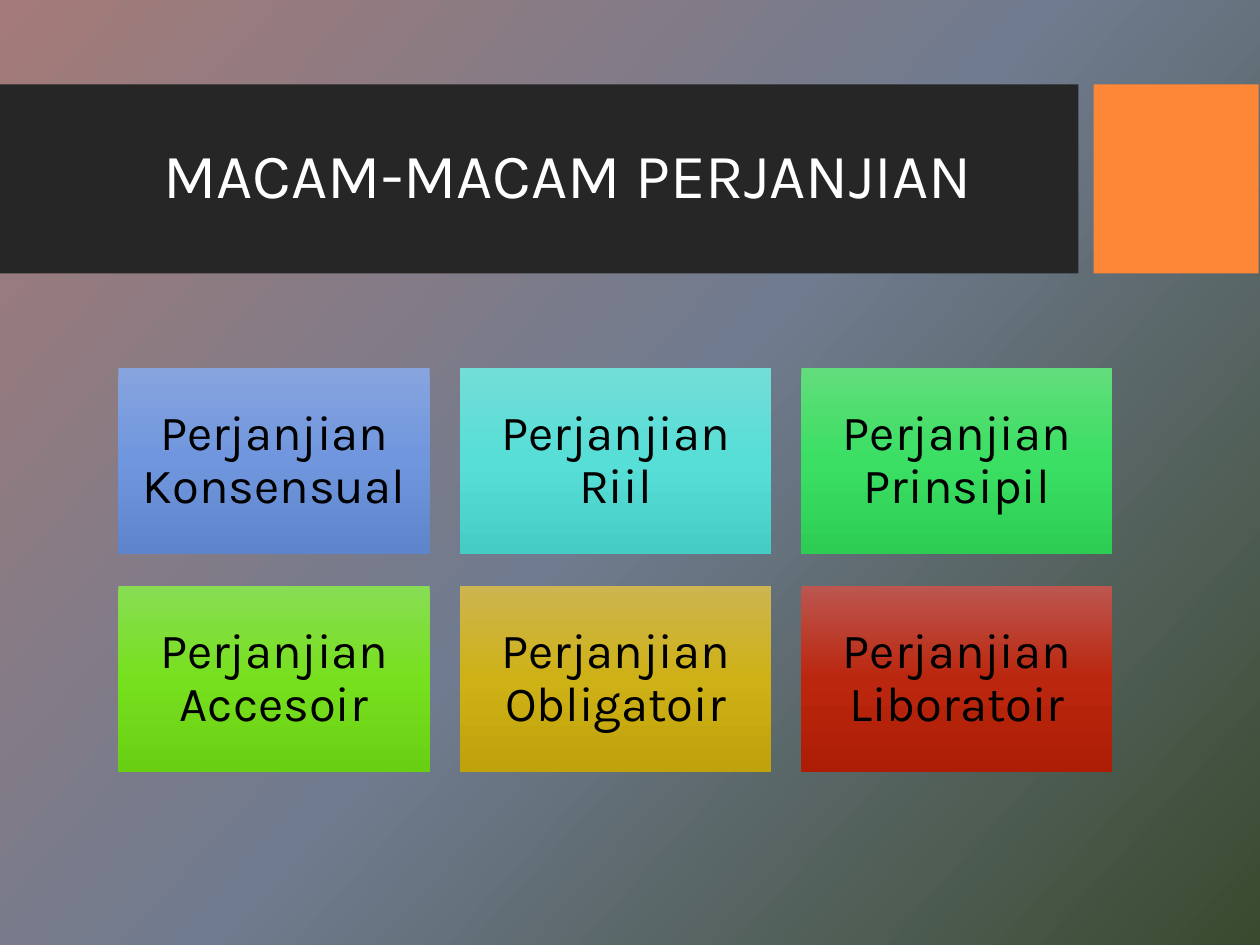
import copy
import pptx
import pptx.util
import pptx.dml.color
import pptx.enum.shapes
import pptx.enum.text
import pptx.oxml.ns

Inches = pptx.util.Inches
RGBColor = pptx.dml.color.RGBColor

WHITE = RGBColor(0xFF, 0xFF, 0xFF)
BLACK = RGBColor(0x00, 0x00, 0x00)
CHARCOAL = RGBColor(0x26, 0x26, 0x26)
ORANGE = RGBColor(0xFE, 0x86, 0x37)
BACKDROP = [RGBColor(0xA4, 0x7B, 0x78), RGBColor(0x70, 0x7B, 0x8F), RGBColor(0x3A, 0x4A, 0x2F)]
BLUE = [RGBColor(0x87, 0xA4, 0xDE), RGBColor(0x70, 0x96, 0xDE), RGBColor(0x5E, 0x84, 0xCB)]
TURQUOISE = [RGBColor(0x73, 0xDD, 0xD7), RGBColor(0x56, 0xDE, 0xD7), RGBColor(0x45, 0xCC, 0xC5)]
GREEN = [RGBColor(0x62, 0xDD, 0x7B), RGBColor(0x3A, 0xDF, 0x63), RGBColor(0x2D, 0xCD, 0x54)]
LIME = [RGBColor(0x88, 0xDD, 0x54), RGBColor(0x77, 0xE0, 0x1E), RGBColor(0x69, 0xCF, 0x13)]
GOLD = [RGBColor(0xCD, 0xB5, 0x51), RGBColor(0xCE, 0xB1, 0x15), RGBColor(0xBF, 0xA2, 0x0C)]
RED = [RGBColor(0xBC, 0x56, 0x4F), RGBColor(0xBB, 0x26, 0x0E), RGBColor(0xAD, 0x1D, 0x06)]


def set_gradient(fill, element, colors, clockwise_angle):
    fill.gradient()
    fill.gradient_angle = 360 - clockwise_angle
    stop_list = element.find(".//" + pptx.oxml.ns.qn("a:gsLst"))
    stop_list.append(copy.deepcopy(stop_list[-1]))
    for stop, color, position in zip(fill.gradient_stops, colors, (0, 0.5, 1)):
        stop.color.rgb = color
        stop.position = position


def write_text(shape, text, size, color):
    frame = shape.text_frame
    frame.word_wrap = True
    frame.auto_size = pptx.enum.text.MSO_AUTO_SIZE.NONE
    frame.vertical_anchor = pptx.enum.text.MSO_ANCHOR.MIDDLE
    paragraph = frame.paragraphs[0]
    paragraph.alignment = pptx.enum.text.PP_ALIGN.CENTER
    paragraph.line_spacing = 0.9
    run = paragraph.add_run()
    run.text = text
    run.font.name = "Karla"
    run.font.size = pptx.util.Pt(size)
    run.font.color.rgb = color


presentation = pptx.Presentation()
presentation.slide_width = Inches(10)
presentation.slide_height = Inches(7.5)
slide = presentation.slides.add_slide(presentation.slide_layouts[5])
set_gradient(slide.background.fill, slide.element, BACKDROP, 42)
rectangle = pptx.enum.shapes.MSO_SHAPE.RECTANGLE

for left, width, color in [(0, 8.56, CHARCOAL), (8.68, 1.31, ORANGE)]:
    band = slide.shapes.add_shape(rectangle, Inches(left), Inches(0.67), Inches(width), Inches(1.5))
    band.shadow.inherit = False
    band.fill.solid()
    band.fill.fore_color.rgb = color
    band.line.fill.background()

title = slide.shapes.title
title.left, title.top = Inches(0.56), Inches(0.82)
title.width, title.height = Inches(7.89), Inches(1.18)
write_text(title, "MACAM-MACAM PERJANJIAN", 36, WHITE)
slide.shapes.element.append(title.element)

agreements = [
    ("Perjanjian Konsensual", BLUE),
    ("Perjanjian Riil", TURQUOISE),
    ("Perjanjian Prinsipil", GREEN),
    ("Perjanjian Accesoir", LIME),
    ("Perjanjian Obligatoir", GOLD),
    ("Perjanjian Liboratoir", RED),
]
card_width, card_height, gap = 2.47, 1.48, 0.25
for index, (name, colors) in enumerate(agreements):
    row, column = divmod(index, 3)
    left = Inches(0.94 + column * (card_width + gap - 0.01))
    top = Inches(2.92 + row * (card_height + gap))
    card = slide.shapes.add_shape(rectangle, left, top, Inches(card_width), Inches(card_height))
    card.shadow.inherit = False
    set_gradient(card.fill, card.element, colors, 90)
    card.line.fill.background()
    frame = card.text_frame
    frame.margin_left = frame.margin_right = Inches(0.12)
    frame.margin_top = frame.margin_bottom = Inches(0.12)
    write_text(card, name, 28, BLACK)

presentation.save("out.pptx")
